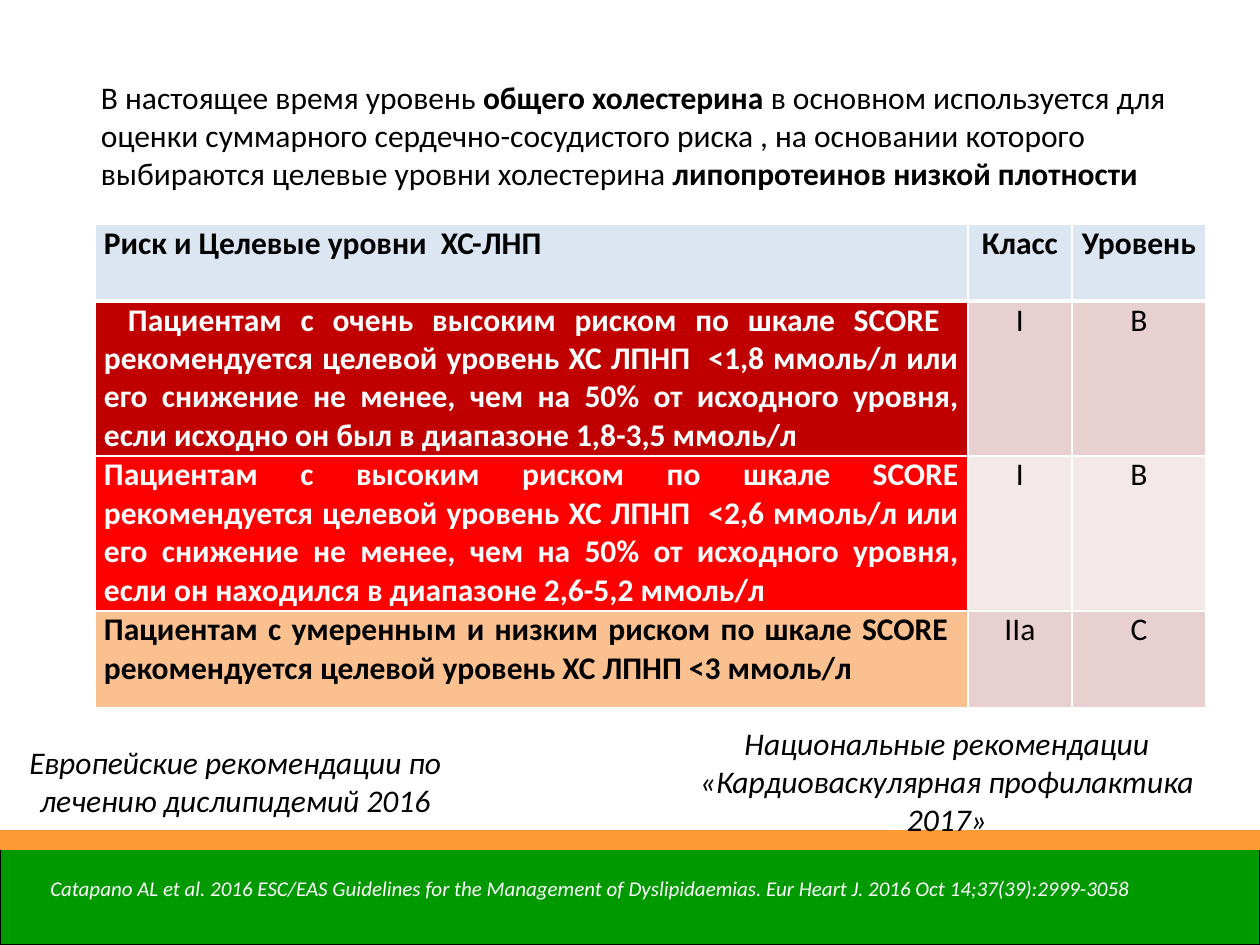
import pptx
import pptx.dml.color
import pptx.enum.shapes
import pptx.enum.text
import pptx.oxml
import pptx.oxml.ns
import pptx.util

PX = 914400 / 126  # EMU per px
ALIGN = pptx.enum.text.PP_ALIGN
MIDDLE = pptx.enum.text.MSO_ANCHOR.MIDDLE
COLORS = {
    "black": "000000", "white": "FFFFFF", "green": "009900", "orange": "FF9933",
    "header": "DCE6F2", "very_high": "C00000", "high": "FF0000",
    "moderate": "FAC090", "pink": "E8D0D0", "pale_pink": "F4E9E9",
}
RGB = {name: pptx.dml.color.RGBColor.from_string(code) for name, code in COLORS.items()}


def emu(*lengths):
    return [round(length * PX) for length in lengths]


def write(paragraph, text, color="black", **font_format):
    run = paragraph.add_run()
    run.text = text
    run.font.color.rgb = RGB[color]
    for name, value in {"name": "Calibri", "size": pptx.util.Pt(18), **font_format}.items():
        setattr(run.font, name, value)


deck = pptx.Presentation()
deck.slide_width, deck.slide_height = emu(1260, 945)
slide = deck.slides.add_slide(deck.slide_layouts[6])

# Footer bands
for top, height, color, outlined in [(849, 96, "green", True), (830, 20, "orange", False)]:
    band = slide.shapes.add_shape(
        pptx.enum.shapes.MSO_SHAPE.RECTANGLE, *emu(0, top, 1260, height))
    band.shadow.inherit = False
    band.fill.solid()
    band.fill.fore_color.rgb = RGB[color]
    if outlined:
        band.line.color.rgb = RGB["black"]
        band.line.width = pptx.util.Pt(0.75)
    else:
        band.line.fill.background()

# Introduction
intro = slide.shapes.add_textbox(*emu(39, 72, 1187, 126)).text_frame
intro.word_wrap = True
intro.vertical_anchor = MIDDLE
intro.margin_left = emu(62)[0]
for text, bold in [
    ("В настоящее время уровень ", False),
    ("общего холестерина", True),
    (" в основном используется для оценки суммарного сердечно-сосудистого риска , "
     "на основании которого выбираются целевые уровни холестерина ", False),
    ("липопротеинов низкой плотности", True),
]:
    write(intro.paragraphs[0], text, bold=bold)

# Source captions and citation
for box, wrap, size, color, lines in [
    ((15, 736, 441, 90), True, 18, "black",
     ["Европейские рекомендации по лечению дислипидемий 2016"]),
    ((669, 736, 556, 90), False, 18, "black",
     ["Национальные рекомендации", "«Кардиоваскулярная профилактика 2017»"]),
    ((0, 859, 1181, 59), False, 12, "white",
     ["Catapano AL et al. 2016 ESC/EAS Guidelines for the Management of "
      "Dyslipidaemias. Eur Heart J. 2016 Oct 14;37(39):2999-3058"]),
]:
    caption = slide.shapes.add_textbox(*emu(*box)).text_frame
    caption.word_wrap = wrap
    caption.vertical_anchor = MIDDLE
    for index, line in enumerate(lines):
        paragraph = caption.add_paragraph() if index else caption.paragraphs[0]
        paragraph.alignment = ALIGN.CENTER
        write(paragraph, line, color, size=pptx.util.Pt(size), italic=True)

# Risk table: height, texts, fill of risk cell, its text colour, fill of the other cells
rows = [
    (77, ["Риск и Целевые уровни  ХС-ЛНП", "Класс", "Уровень"], "header", "black", "header"),
    (155, ["Пациентам с очень высоким риском по шкале SCORE  рекомендуется целевой "
           "уровень ХС ЛПНП  <1,8 ммоль/л или его снижение не менее, чем на 50% от "
           "исходного уровня, если исходно он был в диапазоне 1,8-3,5 ммоль/л",
           "I", "В"], "very_high", "white", "pink"),
    (155, ["Пациентам с высоким риском по шкале SCORE рекомендуется целевой "
           "уровень ХС ЛПНП  <2,6 ммоль/л или его снижение не менее, чем на 50% от "
           "исходного уровня, если он находился в диапазоне 2,6-5,2 ммоль/л",
           "I", "В"], "high", "white", "pale_pink"),
    (97, ["Пациентам с умеренным и низким риском по шкале SCORE  рекомендуется "
          "целевой уровень ХС ЛПНП <3 ммоль/л", "IIа", "С"], "moderate", "black", "pink"),
]
widths = [873, 104, 134]
risks = slide.shapes.add_table(
    len(rows), len(widths), *emu(95, 224, sum(widths), sum(row[0] for row in rows))).table
for column, width in zip(risks.columns, emu(*widths)):
    column.width = width

margins = dict(zip(["margin_left", "margin_top", "margin_right", "margin_bottom"],
                   emu(9, 0, 9, 0)))
for r, (height, texts, risk_fill, risk_color, grade_fill) in enumerate(rows):
    risks.rows[r].height = emu(height)[0]
    for c, text in enumerate(texts):
        cell = risks.cell(r, c)
        for name, value in margins.items():
            setattr(cell, name, value)

        # White borders, thicker between header and body
        for side in ["L", "R", "T", "B"]:
            thick = (r, side) in [(0, "B"), (1, "T")]
            cell._tc.get_or_add_tcPr().append(pptx.oxml.parse_xml(
                f'<a:ln{side} {pptx.oxml.ns.nsdecls("a")} w="{38100 if thick else 12700}">'
                f'<a:solidFill><a:srgbClr val="{COLORS["white"]}"/></a:solidFill></a:ln{side}>'))
        cell.fill.solid()
        cell.fill.fore_color.rgb = RGB[grade_fill if c else risk_fill]

        paragraph = cell.text_frame.paragraphs[0]
        paragraph.alignment = ALIGN.CENTER if c else ALIGN.JUSTIFY
        if (r, c) == (1, 0):
            paragraph._p.get_or_add_pPr().set("indent", str(emu(24)[0]))
        write(paragraph, text, "black" if c else risk_color, bold=r == 0 or c == 0)

deck.save("out.pptx")
